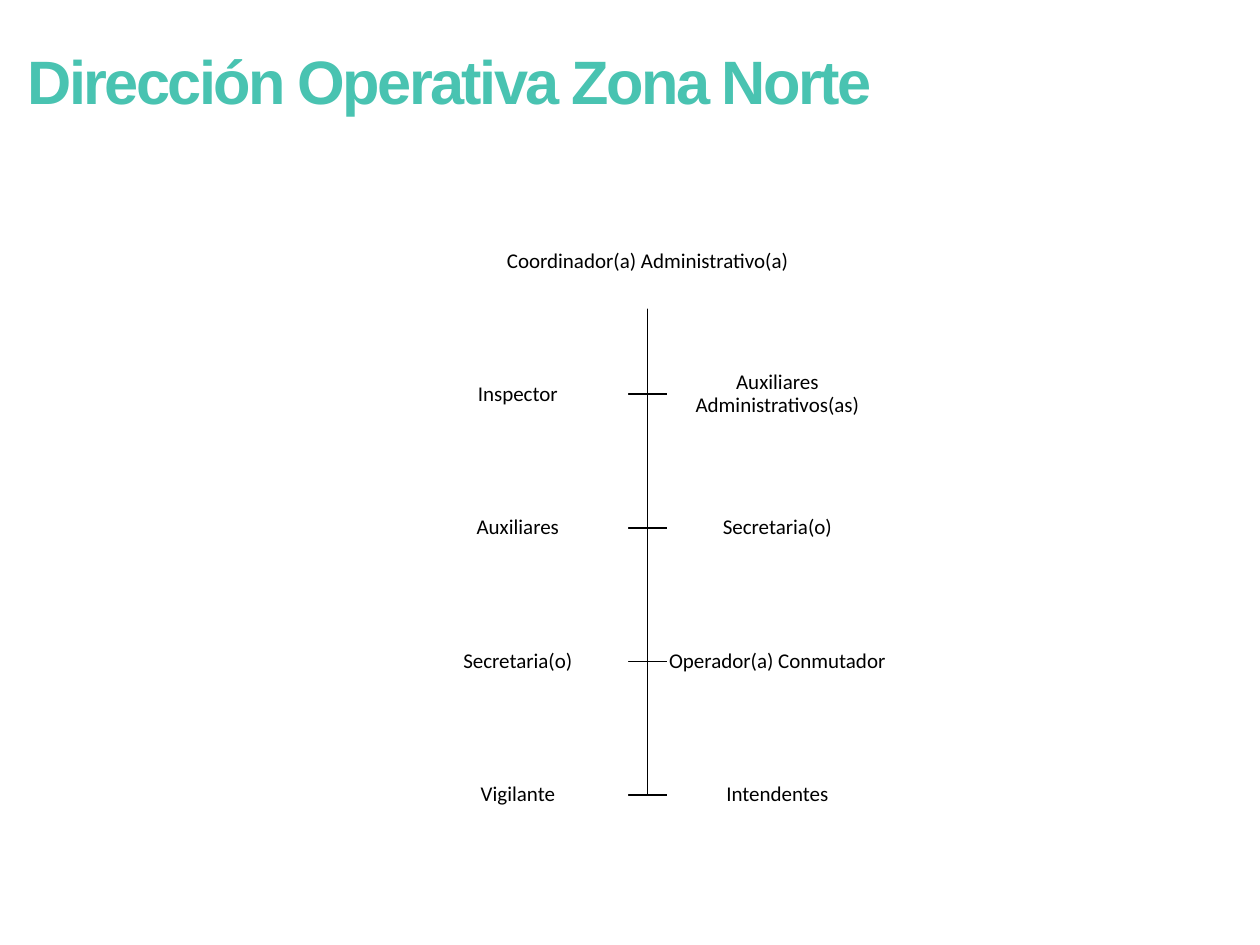
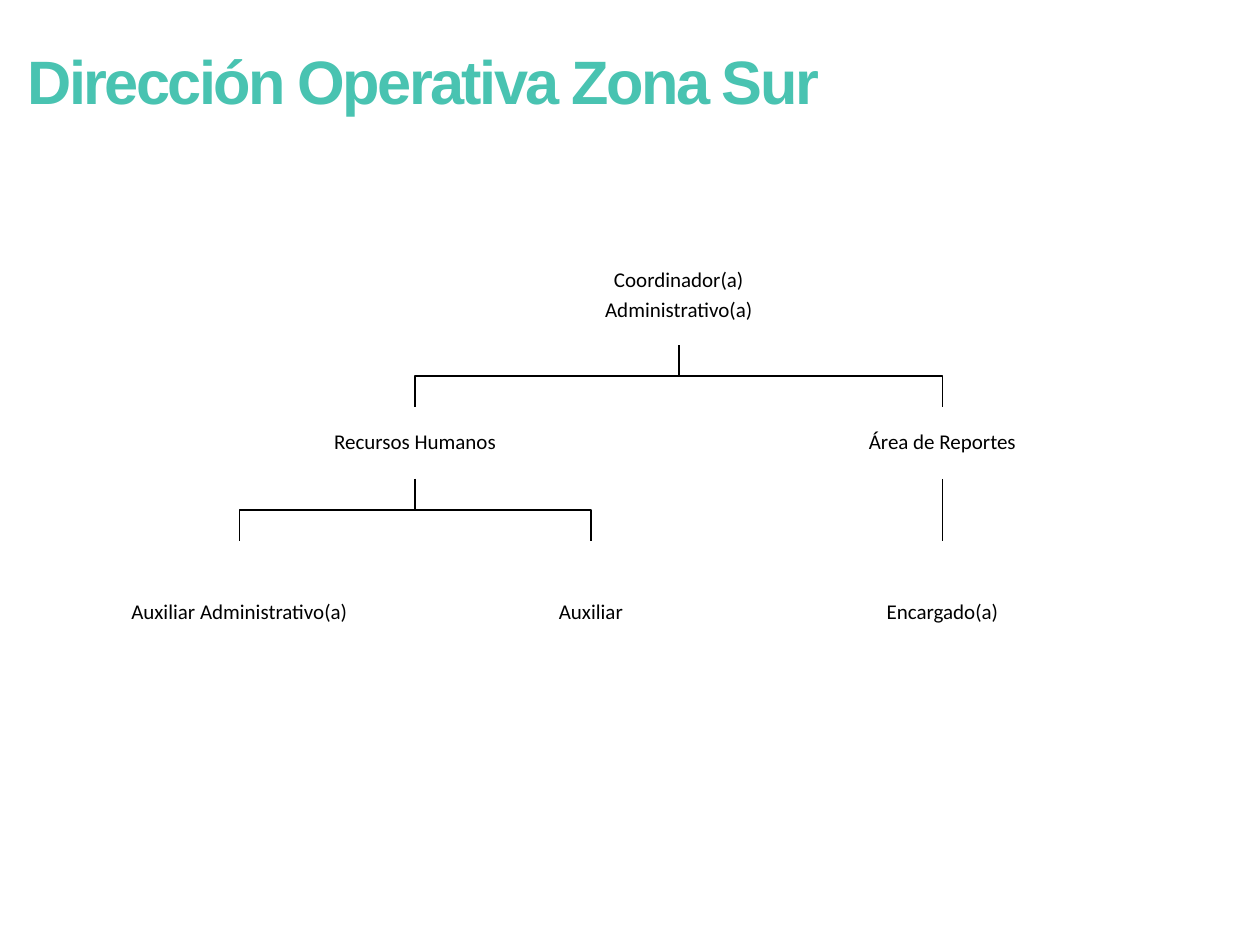
from dataclasses import dataclass

from pptx import Presentation
from pptx.dml.color import RGBColor
from pptx.enum.shapes import MSO_CONNECTOR, MSO_SHAPE
from pptx.enum.text import MSO_ANCHOR, MSO_AUTO_SIZE, PP_ALIGN
from pptx.oxml.ns import qn
from pptx.shapes.autoshape import Shape
from pptx.slide import Slide
from pptx.util import Inches, Pt
from lxml.etree import SubElement


@dataclass(frozen=True)
class Theme:
    title_color: RGBColor = RGBColor(0x49, 0xC3, 0xB1)
    ink: RGBColor = RGBColor(0, 0, 0)
    paper: RGBColor = RGBColor(0xFF, 0xFF, 0xFF)
    title_font: str = "Arial"
    body_font: str = "Calibri"
    title_size: Pt = Pt(35)
    body_size: Pt = Pt(12)
    paragraph_gap: Pt = Pt(4.2)
    line_width: Pt = Pt(1)
    title_tracking: int = -150  # hundredths of a point


THEME = Theme()


@dataclass(frozen=True)
class Post:
    """A position in the chart: its label and its box in inches."""
    label: str
    center_x: float
    top: float
    width: float
    height: float

    @property
    def bottom(self) -> float:
        return self.top + self.height

    @property
    def middle(self) -> float:
        return self.top + self.height / 2


def add_title(s: Slide, text: str) -> None:
    sp = s.shapes.add_textbox(Inches(0.12), Inches(0.29), Inches(8.23), Inches(0.69))
    tf = sp.text_frame
    tf.word_wrap = True
    tf.auto_size = MSO_AUTO_SIZE.SHAPE_TO_FIT_TEXT
    tf.text = text
    r = tf.paragraphs[0].runs[0]
    r.font.name = THEME.title_font
    r.font.size = THEME.title_size
    r.font.bold = True
    r.font.color.rgb = THEME.title_color
    r.font._element.set("spc", str(THEME.title_tracking))


def add_post(s: Slide, post: Post) -> Shape:
    sp = s.shapes.add_shape(
        MSO_SHAPE.RECTANGLE, Inches(post.center_x - post.width / 2), Inches(post.top),
        Inches(post.width), Inches(post.height))
    sp.shadow.inherit = False
    sp.fill.solid()
    sp.fill.fore_color.rgb = THEME.paper
    sp.line.fill.background()
    tf = sp.text_frame
    tf.word_wrap = True
    tf.vertical_anchor = MSO_ANCHOR.MIDDLE
    tf.margin_left = tf.margin_top = tf.margin_right = tf.margin_bottom = Inches(0.01)
    tf.text = post.label
    for p in tf.paragraphs:
        p.alignment = PP_ALIGN.CENTER
        p.line_spacing = 0.9
        p.space_after = THEME.paragraph_gap
        for r in p.runs:
            r.font.name = THEME.body_font
            r.font.size = THEME.body_size
            r.font.color.rgb = THEME.ink
    return sp


def style_line(sp) -> None:
    sp.line.color.rgb = THEME.ink
    sp.line.width = THEME.line_width


def add_elbow(s: Slide, points: list[tuple[float, float]]) -> None:
    start, *rest = [(Inches(x), Inches(y)) for x, y in points]
    builder = s.shapes.build_freeform(*start)
    builder.add_line_segments(rest, close=False)
    sp = builder.convert_to_shape()
    sp.shadow.inherit = False
    sp.fill.background()
    style_line(sp)


def add_drop(s: Slide, parent: Shape, child: Shape) -> None:
    """Straight line from the bottom of one box to the top of another."""
    line = s.shapes.add_connector(MSO_CONNECTOR.STRAIGHT, 0, 0, 0, 0)
    line.begin_connect(parent, 2)
    line.end_connect(child, 0)
    style_line(line)
    SubElement(line._element.spPr, qn("a:effectLst"))


def build_north(s: Slide) -> None:
    add_title(s, "Dirección Operativa Zona Norte")
    spine_x, arm, width, height = 5.14, 0.155, 1.75, 0.54
    first_top, row_pitch = 2.86, 1.06
    staff = [
        ("Inspector", "Auxiliares Administrativos(as)"),
        ("Auxiliares", "Secretaria(o)"),
        ("Secretaria(o)", "Operador(a) Conmutador"),
        ("Vigilante", "Intendentes"),
    ]
    head = Post("Coordinador(a) Administrativo(a)", spine_x, 1.71, 2.52, 0.74)
    add_post(s, head)
    for row, labels in enumerate(staff):
        for side, label in zip((-1, 1), labels):
            post = Post(label, spine_x + side * (arm + width / 2),
                        first_top + row * row_pitch, width, height)
            add_elbow(s, [(spine_x, head.bottom), (spine_x, post.middle),
                          (spine_x + side * arm, post.middle)])
            add_post(s, post)


def build_south(s: Slide) -> None:
    add_title(s, "Dirección Operativa Zona Sur")
    width, leaf_left, leaf_pitch = 2.3, 1.9, 2.79
    areas = {
        "Recursos Humanos": ["Auxiliar Administrativo(a)", "Auxiliar"],
        "Área de Reportes": ["Encargado(a)"],
    }

    def link(parent: Post, child: Post) -> None:
        bend_y = (parent.bottom + child.top) / 2
        add_elbow(s, [(parent.center_x, parent.bottom), (parent.center_x, bend_y),
                      (child.center_x, bend_y), (child.center_x, child.top)])

    area_posts, leaf_x = [], leaf_left
    for area, labels in areas.items():
        leaves = [Post(label, leaf_x + i * leaf_pitch, 4.29, width, 1.15)
                  for i, label in enumerate(labels)]
        leaf_x += len(labels) * leaf_pitch
        center_x = (leaves[0].center_x + leaves[-1].center_x) / 2
        post = Post(area, center_x, 3.23, width, 0.57)
        area_posts.append(post)
        area_box = add_post(s, post)
        for leaf in leaves:
            leaf_box = add_post(s, leaf)
            if len(leaves) == 1:
                add_drop(s, area_box, leaf_box)
            else:
                link(post, leaf)

    center_x = (area_posts[0].center_x + area_posts[-1].center_x) / 2
    head = Post("Coordinador(a)\nAdministrativo(a)", center_x, 1.96, width, 0.78)
    add_post(s, head)
    for post in area_posts:
        link(head, post)


def main() -> None:
    prs = Presentation()
    prs.slide_width, prs.slide_height = Inches(10), Inches(7.5)
    for build in (build_north, build_south):
        build(prs.slides.add_slide(prs.slide_layouts[6]))
    prs.save("out.pptx")


if __name__ == "__main__":
    main()
